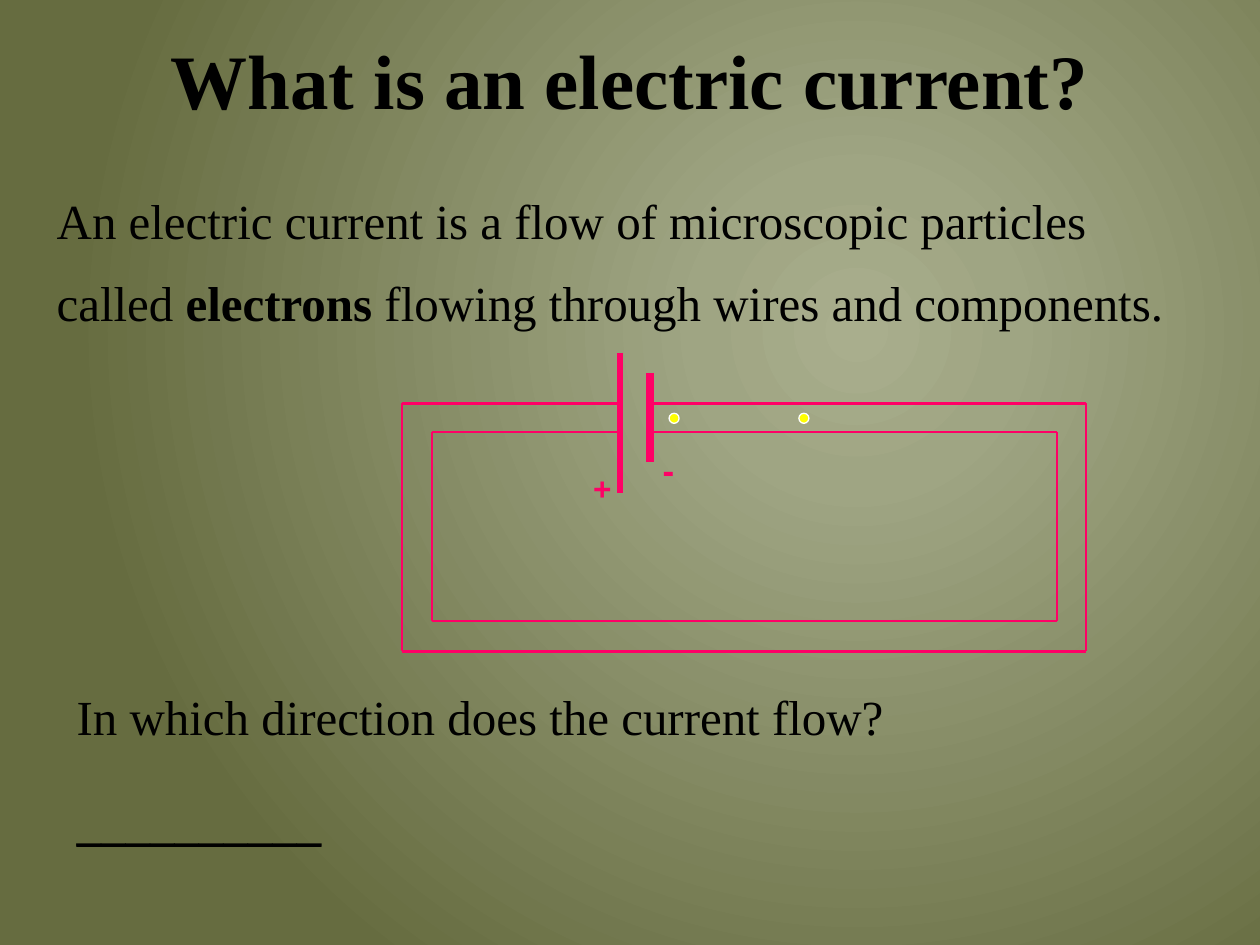
from typing import NamedTuple

from lxml import etree
from pptx import Presentation
from pptx import util as u
from pptx.dml.color import RGBColor
from pptx.enum import shapes, text
from pptx.oxml import parse_xml
from pptx.oxml.ns import nsdecls, qn

COLS, ROWS = 100, 75
PINK, BLACK, YELLOW, WHITE = "FF0066", "000000", "FFFF00", "FFFFFF"
SERIF, SANS = "Times New Roman", "Arial"
STOPS = [(0, "A9AE8D"), (20, "9FA583"), (100, "666C40")]

prs = Presentation()
prs.slide_width, prs.slide_height = u.Inches(10), u.Inches(7.5)


class Box(NamedTuple):
    """Columns and rows of the slide grid."""
    left: float
    top: float
    width: float
    height: float


class Loop(NamedTuple):
    """One side of the wire, open at the battery."""
    left: float
    top: float
    right: float
    bottom: float


class Plate(NamedTuple):
    """A battery plate and its pole label."""
    x: float
    top: float
    bottom: float
    weight: float
    sign: str
    size: int
    label: Box


def x(cols: float) -> int:
    return round(prs.slide_width * cols / COLS)


def y(rows: float) -> int:
    return round(prs.slide_height * rows / ROWS)


def rgb(value: str) -> RGBColor:
    return RGBColor.from_string(value)


def place(sp, box: Box) -> None:
    sp.left, sp.top = x(box.left), y(box.top)
    sp.width, sp.height = x(box.width), y(box.height)


def write(sp, box: Box, *runs: str, size: int = 28, font: str = SERIF,
          color: str = BLACK, bold: tuple = (), underline: bool = False,
          align=text.PP_ALIGN.LEFT, anchor=text.MSO_ANCHOR.TOP,
          spacing: float = 1, before: int = 50) -> None:
    """Fill a shape with one paragraph; bold lists the indexes of bold runs."""
    place(sp, box)
    tf = sp.text_frame
    tf.word_wrap, tf.vertical_anchor = True, anchor
    tf.auto_size = text.MSO_AUTO_SIZE.SHAPE_TO_FIT_TEXT
    p = tf.paragraphs[0]
    p.alignment, p.line_spacing, p.space_before = align, spacing, u.Pt(0)
    pPr = p._p.get_or_add_pPr()
    pPr.set("marL", "0")
    pPr.set("indent", "0")
    etree.SubElement(pPr, qn("a:buNone"))
    if before:  # spacing as a share of the line height
        spc = pPr.find(qn("a:spcBef"))
        spc.clear()
        etree.SubElement(spc, qn("a:spcPct"), val=str(before * 1000))
    for i, words in enumerate(runs):
        r = p.add_run()
        r.text = words
        r.font.name, r.font.size = font, u.Pt(size)
        r.font.bold, r.font.underline = i in bold, underline
        r.font.color.rgb = rgb(color)


def wire(s, x1: float, y1: float, x2: float, y2: float, weight: float = 1.5) -> None:
    ln = s.shapes.add_connector(shapes.MSO_CONNECTOR.STRAIGHT, x(x1), y(y1), x(x2), y(y2))
    ln.line.color.rgb, ln.line.width = rgb(PINK), u.Pt(weight)
    etree.SubElement(ln._element.spPr, qn("a:effectLst"))


def electron(s, box: Box) -> None:
    sp = s.shapes.add_shape(shapes.MSO_SHAPE.OVAL, 0, 0, 0, 0)
    place(sp, box)
    sp.shadow.inherit = False
    sp.fill.solid()
    sp.fill.fore_color.rgb = rgb(YELLOW)
    sp.line.color.rgb, sp.line.width = rgb(WHITE), u.Pt(0.75)


def text_box(s):
    return s.shapes.add_textbox(0, 0, 0, 0)


def paint_background(s) -> None:
    stops = "".join(f'<a:gs pos="{pos * 1000}"><a:srgbClr val="{c}"/></a:gs>'
                    for pos, c in STOPS)
    s._element.cSld.insert(0, parse_xml(
        f'<p:bg {nsdecls("p", "a")}><p:bgPr><a:gradFill rotWithShape="1">'
        f'<a:gsLst>{stops}</a:gsLst><a:path path="circle">'
        '<a:fillToRect l="68000" t="35000" r="32000" b="65000"/></a:path>'
        '</a:gradFill><a:effectLst/></p:bgPr></p:bg>'))


PLATES = [
    Plate(49.2, 28, 39.1, 3, "+", 18, Box(46.1, 36.7, 3.9, 4)),
    Plate(51.6, 29.6, 36.7, 4.5, "-", 20, Box(51.6, 35.1, 3.9, 4.3)),
]
LOOPS = [Loop(31.9, 32, 86.2, 51.7), Loop(34.3, 34.3, 83.9, 49.3)]


def main() -> None:
    s = prs.slides.add_slide(prs.slide_layouts[1])
    paint_background(s)

    # Title and definition
    title, body = s.placeholders
    write(title, Box(0, 2.1, 100, 8.3), "What is an electric current?",
          size=44, bold=(0,), align=text.PP_ALIGN.CENTER)
    write(body, Box(3.5, 13, 92.1, 13.5),
          "An electric current is a flow of microscopic particles called ",
          "electrons", " flowing through wires and components.",
          bold=(1,), anchor=text.MSO_ANCHOR.MIDDLE, spacing=1.4, before=0)

    # Battery
    for plate in PLATES:
        wire(s, plate.x, plate.top, plate.x, plate.bottom, plate.weight)
        write(text_box(s), plate.label, plate.sign, size=plate.size,
              font=SANS, color=PINK, bold=(0,))

    # Wires, from each plate around to the other
    plus, minus = PLATES
    for loop in LOOPS:
        wire(s, loop.left, loop.top, plus.x, loop.top)
        wire(s, minus.x, loop.top, loop.right, loop.top)
        wire(s, loop.left, loop.bottom, loop.right, loop.bottom)
        for side in (loop.left, loop.right):
            wire(s, side, loop.top, side, loop.bottom)

    # Electrons
    for left in (53.1, 63.4):
        electron(s, Box(left, 32.8, 0.8, 0.8))

    # Question and answer line
    write(text_box(s), Box(5.1, 54, 67.7, 5.7),
          "In which direction does the current flow?")
    write(text_box(s), Box(5.1, 62.3, 94.9, 5.7), "_" * 10,
          bold=(0,), underline=True)

    prs.save("out.pptx")


if __name__ == "__main__":
    main()
